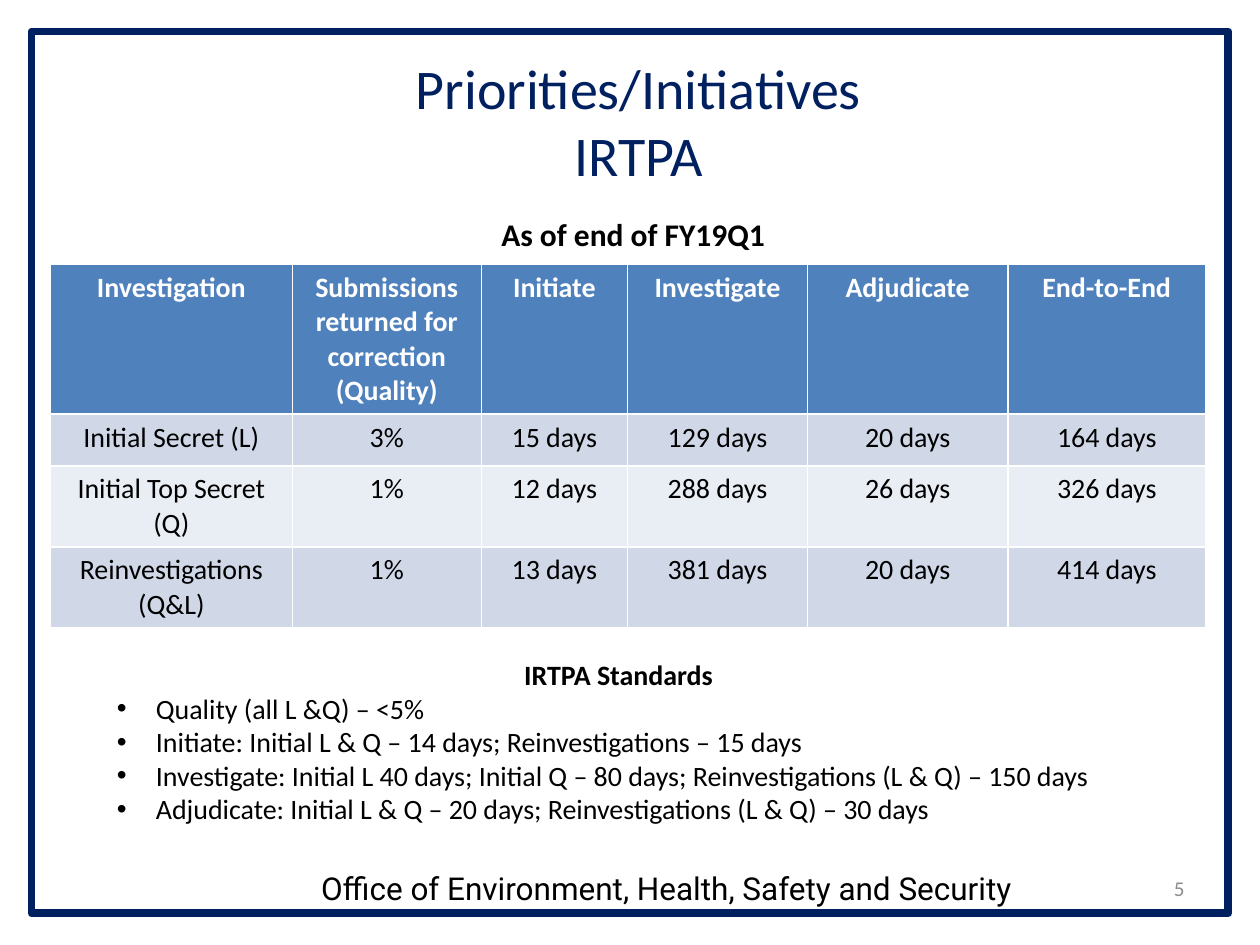
from lxml import etree
from pptx import Presentation
from pptx.dml.color import RGBColor
from pptx.enum.shapes import MSO_SHAPE
from pptx.enum.text import MSO_ANCHOR, MSO_AUTO_SIZE, PP_ALIGN
from pptx.oxml.ns import qn
from pptx.util import Inches, Pt

LEFT, CENTER, RIGHT = PP_ALIGN.LEFT, PP_ALIGN.CENTER, PP_ALIGN.RIGHT
MIDDLE = MSO_ANCHOR.MIDDLE
TITLE_ONLY = 5

COLORS = {
    "navy": "002060",
    "black": "000000",
    "white": "FFFFFF",
    "gray": "8C8C8C",
    "header": "4F81BD",
    "band_dark": "D0D8E8",
    "band_light": "E9EDF4",
}

COLUMN_WIDTHS = [1.92, 1.5, 1.16, 1.43, 1.59, 1.57]
ROW_HEIGHTS = [1.01, 0.41, 0.41, 0.41]
ROWS = [
    ["Investigation", "Submissions returned for correction (Quality)",
     "Initiate", "Investigate", "Adjudicate", "End-to-End"],
    ["Initial Secret (L)", "3%", "15 days", "129 days", "20 days", "164 days"],
    ["Initial Top Secret (Q)", "1%", "12 days", "288 days", "26 days", "326 days"],
    ["Reinvestigations (Q&L)", "1%", "13 days", "381 days", "20 days", "414 days"],
]
STANDARDS = [
    "Quality (all L &Q) – <5%",
    "Initiate: Initial L & Q – 14 days; Reinvestigations – 15 days",
    "Investigate: Initial L 40 days; Initial Q – 80 days; Reinvestigations (L & Q) – 150 days",
    "Adjudicate: Initial L & Q – 20 days; Reinvestigations (L & Q) – 30 days",
]


def rgb(name):
    return RGBColor.from_string(COLORS[name])


def format_paragraph(p, size, color="black", bold=False, align=LEFT, font="Calibri"):
    p.alignment = align
    for r in p.runs:
        r.font.name = font
        r.font.size = Pt(size)
        r.font.bold = bold
        r.font.color.rgb = rgb(color)


def add_text(slide, box, text, size, wrap=True, **style):
    sp = slide.shapes.add_textbox(*map(Inches, box))
    tf = sp.text_frame
    tf.word_wrap = wrap
    tf.text = text
    format_paragraph(tf.paragraphs[0], size, **style)
    return tf


def add_bullet(p, margin, indent):
    pPr = p._p.get_or_add_pPr()
    pPr.set("marL", str(Inches(margin)))
    pPr.set("indent", str(Inches(indent)))
    etree.SubElement(pPr, qn("a:buFont"), typeface="Arial")
    etree.SubElement(pPr, qn("a:buChar"), char="•")


def add_frame(slide, box):
    sp = slide.shapes.add_shape(MSO_SHAPE.RECTANGLE, *map(Inches, box))
    sp.shadow.inherit = False
    sp.fill.background()
    sp.line.color.rgb = rgb("navy")
    sp.line.width = Pt(4.5)


def set_title(slide, box, text):
    title = slide.shapes.title
    title.left, title.top, title.width, title.height = map(Inches, box)
    tf = title.text_frame
    tf.text = text
    tf.auto_size = MSO_AUTO_SIZE.NONE
    tf.vertical_anchor = MIDDLE
    format_paragraph(tf.paragraphs[0], 32, "navy", align=CENTER)


def add_timeline_table(slide, box):
    table = slide.shapes.add_table(len(ROWS), len(COLUMN_WIDTHS), *map(Inches, box)).table
    for column, width in zip(table.columns, COLUMN_WIDTHS):
        column.width = Inches(width)
    for i, (row, height, values) in enumerate(zip(table.rows, ROW_HEIGHTS, ROWS)):
        row.height = Inches(height)
        is_header = i == 0
        fill = "header" if is_header else "band_dark" if i % 2 else "band_light"
        for cell, value in zip(row.cells, values):
            cell.text = value
            cell.fill.solid()
            cell.fill.fore_color.rgb = rgb(fill)
            format_paragraph(cell.text_frame.paragraphs[0], 16,
                             "white" if is_header else "black", is_header, CENTER)


def add_standards(slide, box):
    tf = add_text(slide, box, "IRTPA Standards", 16, bold=True, align=CENTER)
    for standard in STANDARDS:
        p = tf.add_paragraph()
        p.text = standard
        p.level = 1
        add_bullet(p, 0.81, -0.31)
        format_paragraph(p, 16)


def add_footer(slide, left, top, height):
    add_text(slide, (left, top, 6.08, height),
             "Office of Environment, Health, Safety and Security", 18,
             align=CENTER, font="Roboto")
    tf = add_text(slide, (left + 6.2, top, 1.05, height), "5", 12,
                  color="gray", align=RIGHT)
    tf.vertical_anchor = MIDDLE


def main():
    prs = Presentation()
    prs.slide_width, prs.slide_height = Inches(10), Inches(7.5)
    slide = prs.slides.add_slide(prs.slide_layouts[TITLE_ONLY])
    add_frame(slide, (0.25, 0.25, 9.5, 7))
    set_title(slide, (0.58, 0.6, 8.98, 0.72), "Priorities/Initiatives\vIRTPA")
    add_timeline_table(slide, (0.4, 2.1, 9.17, 2.24))
    add_text(slide, (3.88, 1.66, 2.32, 0.4), "As of end of FY19Q1", 18,
             wrap=False, bold=True)
    add_standards(slide, (0.33, 5.17, 9.16, 1.45))
    add_footer(slide, 2.25, 6.85, 0.4)
    prs.save("out.pptx")


if __name__ == "__main__":
    main()
